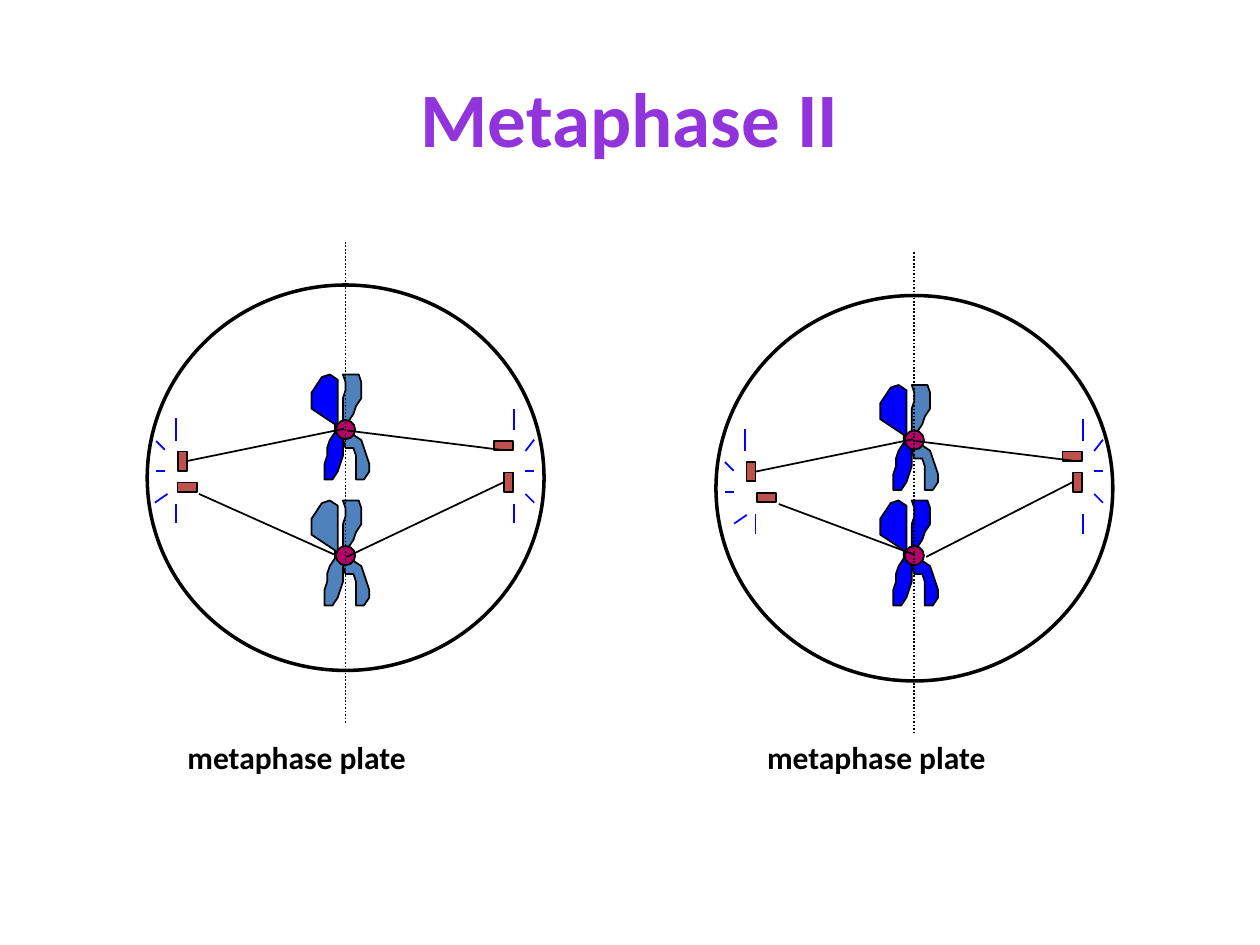
"""Builds the Metaphase II slide: two dividing cells with spindles and plates."""
from lxml import etree
from pptx import Presentation
from pptx.dml.color import RGBColor
from pptx.enum.dml import MSO_LINE
from pptx.enum.shapes import MSO_CONNECTOR, MSO_SHAPE
from pptx.enum.text import MSO_ANCHOR, PP_ALIGN
from pptx.oxml.ns import qn
from pptx.util import Pt

LINE = MSO_CONNECTOR.STRAIGHT
RECT, OVAL = MSO_SHAPE.RECTANGLE, MSO_SHAPE.OVAL
DOTS = MSO_LINE.ROUND_DOT
MIDDLE, TOP = MSO_ANCHOR.MIDDLE, MSO_ANCHOR.TOP
LEFT, CENTER = PP_ALIGN.LEFT, PP_ALIGN.CENTER

FONT = "Calibri"
COLORS = {"title": "9234DB", "ink": "000000", "blue": "0000FF",
          "steel": "4F81BD", "knot": "B50069", "rod": "C0504D"}
UNIT = 1.5
ARMS = {
    "left": [(0, 0), (-3, -1), (-3, -19), (-6, -21), (-9, -20), (-13, -14),
             (-13, -8), (-10, -6), (-4, -2), (-4, 1), (-6, 4), (-7, 7),
             (-7, 10), (-8, 13), (-8, 19), (-5, 19), (-3, 16), (-2, 13),
             (-1, 10), (-1, 1)],
    "right": [(0, 0), (-1, -3), (-1, -12), (0, -15), (0, -18), (-1, -21),
              (5, -21), (6, -18), (6, -12), (4, -9), (3, -6), (1, -3), (0, 0),
              (6, 4), (9, 13), (9, 16), (7, 19), (4, 19), (4, 10), (3, 7),
              (0, 7), (-1, 4), (-1, 1)],
}
RODS = {
    "west": ("fixed", -96, -15, 5.25, 11),
    "south": ("inner", -96, 2.75, 11, 5.25),
    "north": ("fixed", 84.75, -21, 11, 5.25),
    "east": ("fan", 90.5, -3, 5.25, 11),
}
TICKS = [
    ("fixed", 96.25, -27, 96.25, -39.5),
    ("fan", 102.75, -15.25, 107.75, -21.75),
    ("fan", 102.75, -3.75, 107.75, -3.75),
    ("fan", 102.75, 9.25, 107.75, 14.25),
    ("fixed", 96.25, 15, 96.25, 26),
    ("fixed", -96.75, -21, -96.75, -34),
    ("outer", -108.25, -21, -103.25, -16),
    ("outer", -108.25, -3.75, -103.25, -3.75),
    ("slant", -101.75, 9.25, -109, 14.25),
    ("inner", -96.75, 15, -96.75, 26),
]
CELLS = [
    {"mid": (197.5, 273), "label": 100, "low": 44.5,
     "upper": ("blue", "steel"), "lower": ("steel", "steel"), "shift": {},
     "south": (-83.75, 9.25, -6.75, 43.75), "east": (0.5, 45.25)},
    {"mid": (522.5, 279), "label": 431.25, "low": 38.5,
     "upper": ("blue", "steel"), "lower": ("blue", "blue"),
     "shift": {"fan": (0, -6), "inner": (6, 0), "outer": (0, 6), "slant": (6, 6)},
     "south": (-77.5, 9, -0.5, 37.75), "east": (6.75, 39.25)},
]


def color(name):
    """Return the named colour."""
    return RGBColor.from_string(COLORS[name])


def style(shape, fill, width=1):
    """Set fill and black outline of a shape."""
    shape.shadow.inherit = False
    if fill:
        shape.fill.solid()
        shape.fill.fore_color.rgb = color(fill)
    else:
        shape.fill.background()
    shape.line.color.rgb = color("ink")
    shape.line.width = Pt(width)


def add_shape(slide, kind, box, fill, width=1):
    """Add a preset shape in a box of points."""
    shape = slide.shapes.add_shape(kind, *map(Pt, box))
    style(shape, fill, width)
    return shape


def add_disc(slide, x, y, wide, high, fill, width=1):
    """Add an ellipse around a centre."""
    add_shape(slide, OVAL, (x - wide / 2, y - high / 2, wide, high), fill, width)


def add_line(slide, ends, tint="ink", dash=None):
    """Add a thin straight line."""
    line = slide.shapes.add_connector(LINE, *map(Pt, ends))
    line.line.color.rgb = color(tint)
    line.line.width = Pt(1)
    if dash:
        line.line.dash_style = dash
    etree.SubElement(line._element.spPr, qn("a:effectLst"))
    return line


def add_text(slide, text, box, size, tint, align, anchor, wrap):
    """Add a bold one-line text box."""
    frame = slide.shapes.add_textbox(*map(Pt, box)).text_frame
    frame.text = text
    frame.word_wrap = wrap
    frame.vertical_anchor = anchor
    para = frame.paragraphs[0]
    para.alignment = align
    font = para.runs[0].font
    font.name, font.size, font.bold = FONT, Pt(size), True
    font.color.rgb = color(tint)


def add_pair(slide, x, y, fills):
    """Add a chromosome of two arms and a centromere."""
    for arm, fill in zip(ARMS.values(), fills):
        path = slide.shapes.build_freeform(*arm[0], scale=float(Pt(UNIT)))
        path.add_line_segments(arm[1:], close=True)
        style(path.convert_to_shape(Pt(x), Pt(y)), fill)
    add_disc(slide, x, y, 11, 11, "knot")


def add_cell(slide, cell):
    """Add one cell with its chromosomes, poles, plate and spindle."""
    x, y = cell["mid"]

    def place(ends):
        """Move local line ends onto the slide."""
        left, top, right, low = ends
        return x + left, y + top, x + right, y + low

    def shift(group):
        """Return the offset of a group in this cell."""
        return cell["shift"].get(group, (0, 0))

    add_pair(slide, x, y - 27.5, cell["upper"])
    add_pair(slide, x, y + cell["low"], cell["lower"])
    add_disc(slide, x, y, 226.75, 220.25, None, 2)
    rods = {}
    for name, (group, left, top, wide, high) in RODS.items():
        dx, dy = shift(group)
        box = x + left + dx, y + top + dy, wide, high
        rods[name] = add_shape(slide, RECT, box, "rod")
    for group, *ends in TICKS:
        dx, dy = shift(group)
        moved = [end + step for end, step in zip(ends, (dx, dy, dx, dy))]
        add_line(slide, place(moved), "blue")
    add_line(slide, place((0, -134.75, 0, 140.25)), dash=DOTS)
    add_line(slide, place(cell["south"]))
    spans = [("west", 3, (-0.75, -28)), ("north", 2, (0.75, -27)),
             ("east", 1, cell["east"])]
    for name, side, start in spans:
        line = add_line(slide, place(start + start))
        line.end_connect(rods[name], side)
    add_text(slide, "metaphase plate", (cell["label"], 418.25, 203, 36),
             18, "ink", LEFT, TOP, False)


def main():
    """Build and save the slide."""
    deck = Presentation()
    deck.slide_width, deck.slide_height = Pt(720), Pt(540)
    slide = deck.slides.add_slide(deck.slide_layouts[6])
    add_text(slide, "Metaphase II", (36, 21.6, 648, 90),
             44, "title", CENTER, MIDDLE, True)
    for cell in CELLS:
        add_cell(slide, cell)
    deck.save("out.pptx")


if __name__ == "__main__":
    main()
